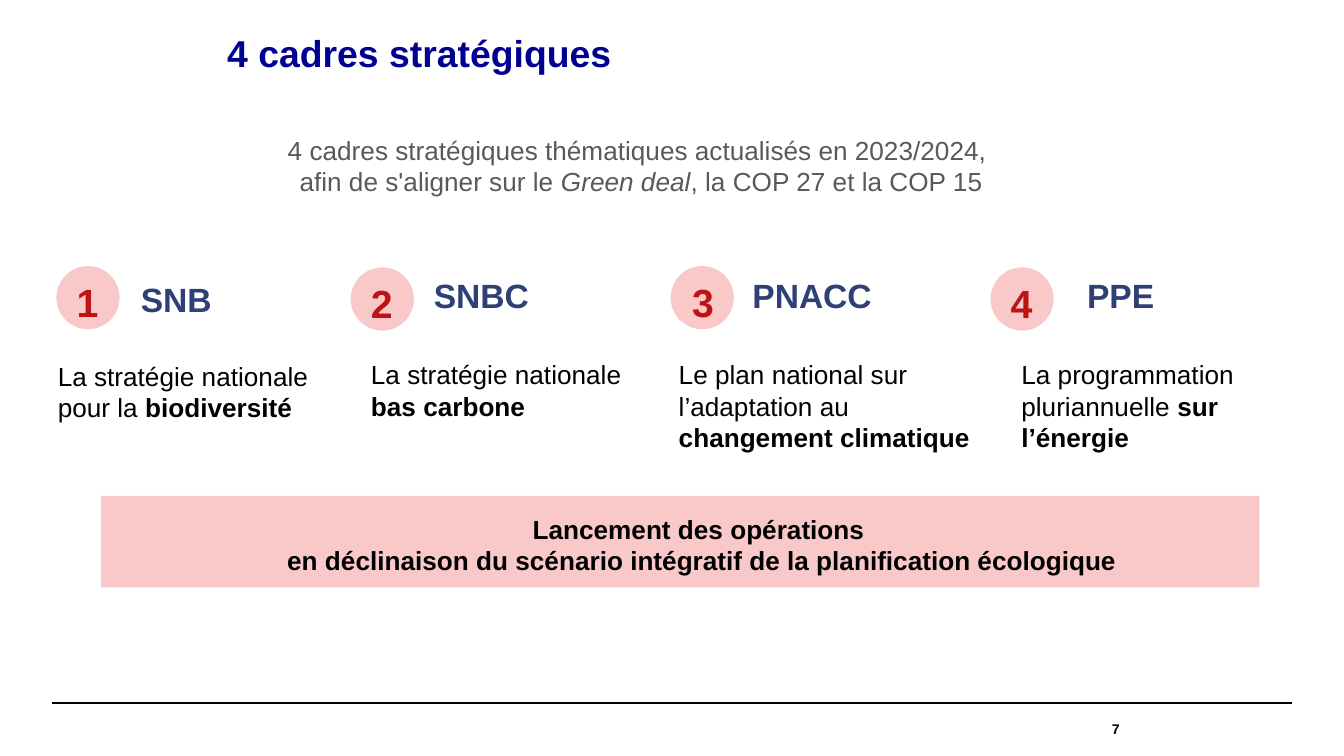
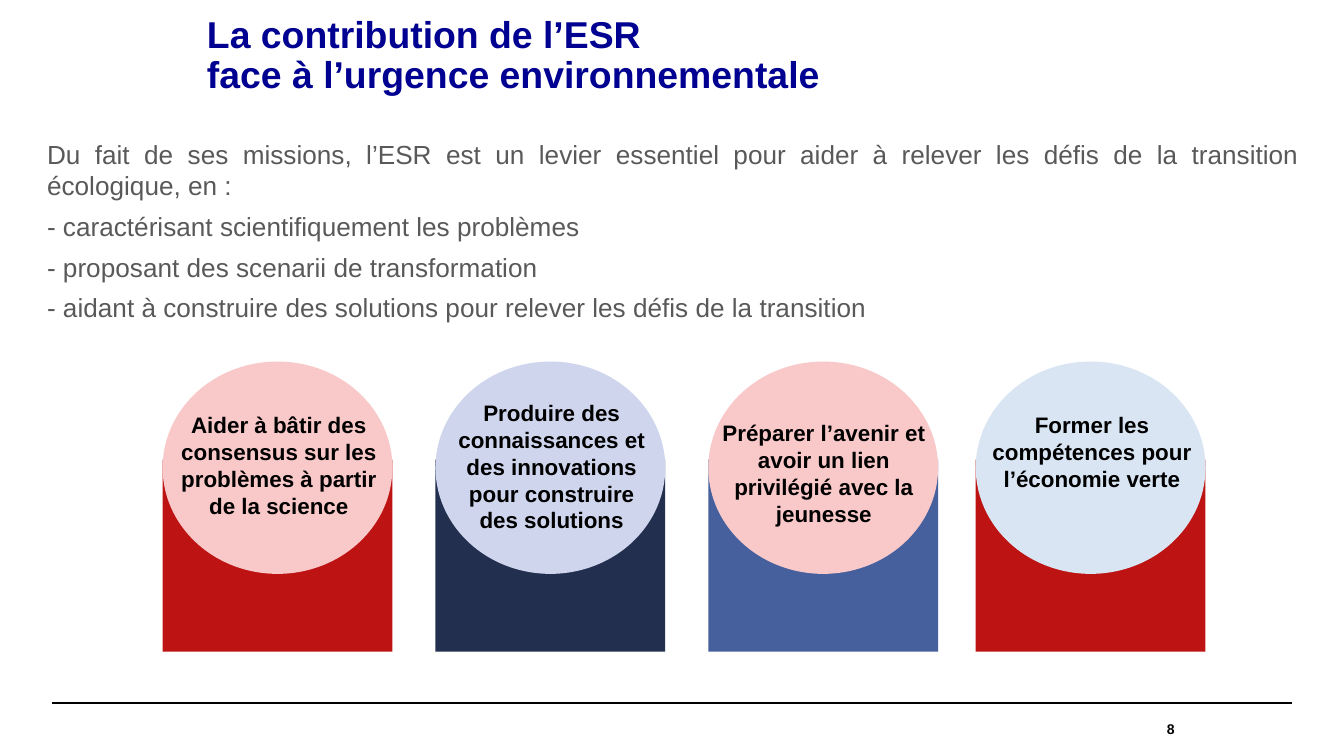
import pptx
import pptx.util
import pptx.dml.color
import pptx.enum.shapes
import pptx.enum.text
import pptx.oxml.ns
import lxml.etree

Inches = pptx.util.Inches
Pt = pptx.util.Pt
Shape = pptx.enum.shapes.MSO_SHAPE
Align = pptx.enum.text.PP_ALIGN
Anchor = pptx.enum.text.MSO_ANCHOR
qn = pptx.oxml.ns.qn

FONT = "Arial"
COLORS = {
    "title": "000091",
    "black": "000000",
    "grey": "595959",
    "name": "2F4077",
    "red": "BD1313",
    "pink": "F9C8C8",
    "navy": "232F4E",
    "blue": "465F9D",
    "lilac": "CED5EC",
    "sky": "D9E5F3",
}

FRAMES = [
    ((0.42, 1.98), "1", "SNB", (0.15, 0.53, 0.05), (0.01, 0.7, 2.01),
     [("La stratégie nationale pour la ", ""), ("biodiversité", "b")]),
    ((2.61, 1.99), "2", "SNBC", (0.15, 0.52, 0.01), (0.15, 0.68, 2.09),
     [("La stratégie nationale", ""), (" bas carbone", "b")]),
    ((4.99, 1.98), "3", "PNACC", (0.16, 0.51, 0.02), (0.06, 0.69, 2.19),
     [("Le plan national sur l’adaptation au ", ""), ("changement climatique", "b")]),
    ((7.37, 1.99), "4", "PPE", (0.15, 0.62, 0.01), (0.23, 0.68, 2.26),
     [("La programmation pluriannuelle ", ""), ("sur l’énergie", "b")]),
]

ROLES = [
    (1.21, "red", "pink", (-0.06, 0.32, 1.85, 0.91),
     "Aider à bâtir des consensus sur les problèmes à partir de la science"),
    (3.24, "navy", "lilac", (0.06, 0.23, 1.61, 1.11),
     "Produire des connaissances et des innovations pour construire des solutions"),
    (5.27, "blue", "pink", (0, 0.38, 1.72, 0.91),
     "Préparer l’avenir et avoir un lien privilégié avec la jeunesse"),
    (7.26, "red", "sky", (-0.06, 0.32, 1.85, 0.71),
     "Former les compétences pour l’économie verte"),
]

GOALS = [
    "Du fait de ses missions, l’ESR est un levier essentiel pour aider à relever les défis "
    "de la transition écologique, en :",
    "- caractérisant scientifiquement les problèmes",
    "- proposant des scenarii de transformation ",
    "- aidant à construire des solutions pour relever les défis de la transition",
]


def tint(key):
    return pptx.dml.color.RGBColor.from_string(COLORS[key])


def place(shape, box):
    shape.left, shape.top, shape.width, shape.height = map(Inches, box)


def style(font, size, color, bold=False, slant=False):
    font.name = FONT
    font.size = Pt(size)
    font.bold = bold
    font.italic = slant
    font.color.rgb = tint(color)


def clear(frame):
    frame.margin_left = frame.margin_top = 0
    frame.margin_right = frame.margin_bottom = 0


def write(frame, lines, size, color, bold=False, align=Align.LEFT,
          pitch=None, after=0, plain=False):
    frame.word_wrap = True
    for index, line in enumerate(lines):
        para = frame.paragraphs[0] if index == 0 else frame.add_paragraph()
        if plain:
            props = para._p.get_or_add_pPr()
            props.set("marL", "0")
            props.set("indent", "0")
            lxml.etree.SubElement(props, qn("a:buNone"))
        para.alignment = align
        para.space_before = Pt(0)
        para.space_after = Pt(after)
        if pitch:
            para.line_spacing = Pt(pitch)
        for text, mark in ([(line, "")] if isinstance(line, str) else line):
            run = para.add_run()
            run.text = text
            style(run.font, size, color, bold or mark == "b", mark == "i")


def add_text(slide, box, lines, size, color, tight=False, **looks):
    frame = slide.shapes.add_textbox(*map(Inches, box)).text_frame
    if tight:
        clear(frame)
    write(frame, lines, size, color, **looks)
    return frame


def add_fill(slide, kind, box, color):
    shape = slide.shapes.add_shape(kind, *map(Inches, box))
    shape.shadow.inherit = False
    shape.fill.solid()
    shape.fill.fore_color.rgb = tint(color)
    shape.line.fill.background()


def add_foot(slide, left, number):
    rule = slide.shapes.add_connector(
        pptx.enum.shapes.MSO_CONNECTOR.STRAIGHT,
        Inches(0.39), Inches(5.23), Inches(9.61), Inches(5.23))
    rule.line.color.rgb = tint("black")
    rule.line.width = Pt(0.8)
    lxml.etree.SubElement(rule._element.spPr, qn("a:effectLst"))
    frame = add_text(slide, (left, 5.23, 1.48, 0.39), [number], 7.5, "black",
                     tight=True, bold=True, align=Align.RIGHT)
    frame.vertical_anchor = Anchor.MIDDLE


def add_title(slide, box, lines):
    title = slide.shapes.title
    place(title, box)
    frame = title.text_frame
    clear(frame)
    frame.auto_size = pptx.enum.text.MSO_AUTO_SIZE.NONE
    frame.vertical_anchor = Anchor.TOP
    frame.word_wrap = True
    para = frame.paragraphs[0]
    para.alignment = Align.LEFT
    para.line_spacing = 0.9
    for index, line in enumerate(lines):
        if index:
            para.add_line_break()
        run = para.add_run()
        run.text = line
        style(run.font, 20, "title", True)


def add_frame(slide, spot, digit, name, shifts, span, words):
    left, top = spot
    inset, gap, drop = shifts
    shift, fall, width = span
    add_fill(slide, Shape.OVAL, (left, top, 0.47, 0.47), "pink")
    add_text(slide, (left + inset, top + 0.03, 0.22, 0.41), [digit], 21, "red",
             tight=True, bold=True, pitch=29.4)
    add_text(slide, (left + gap, top + drop, 1.47, 0.4), [name], 18, "name", bold=True)
    add_text(slide, (left + shift, top + fall, width, 0.72), [words], 14, "black",
             tight=True, pitch=16.8)


def add_launch(slide, box):
    left, top, width, height = box
    add_fill(slide, Shape.RECTANGLE, box, "pink")
    add_text(slide, (left + 1.07, top + 0.13, 6.81, 0.48),
             ["Lancement des opérations ",
              "en déclinaison du scénario intégratif de la planification écologique"],
             14, "black", tight=True, bold=True, align=Align.CENTER, pitch=16.8)


def add_role(slide, box, base, disc, inner, words):
    left, top, width, height = box
    add_fill(slide, Shape.RECTANGLE, (left, top + 0.73, width, height - 0.73), base)
    add_fill(slide, Shape.OVAL, (left, top, width, 1.58), disc)
    shift, drop, span, depth = inner
    add_text(slide, (left + shift, top + drop, span, depth), [words], 12, "black",
             bold=True, align=Align.CENTER)


def add_goals(slide, box):
    body = slide.placeholders[1]
    place(body, box)
    frame = body.text_frame
    clear(frame)
    frame.auto_size = pptx.enum.text.MSO_AUTO_SIZE.NONE
    write(frame, GOALS, 14, "grey", align=Align.JUSTIFY, after=5, plain=True)


def build_frames(deck):
    slide = deck.slides.add_slide(deck.slide_layouts[5])
    add_title(slide, (1.69, 0.26, 3.9, 0.36), ["4 cadres stratégiques"])
    add_text(slide, (0, 0.95, 9.54, 0.81),
             ["4 cadres stratégiques thématiques actualisés en 2023/2024, ",
              [("afin de s'aligner sur le ", ""), ("Green deal", "i"),
               (", la COP 27 et la COP 15", "")]],
             14, "grey", align=Align.CENTER)
    for item in FRAMES:
        add_frame(slide, *item)
    add_launch(slide, (0.75, 3.69, 8.62, 0.68))
    add_foot(slide, 6.85, "7")


def build_roles(deck):
    slide = deck.slides.add_slide(deck.slide_layouts[1])
    add_title(slide, (1.54, 0.12, 8.34, 0.72),
              ["La contribution de l’ESR ", "face à l’urgence environnementale"])
    add_goals(slide, (0.35, 1.03, 9.32, 1.44))
    for left, *looks in ROLES:
        add_role(slide, (left, 2.69, 1.71, 2.16), *looks)
    add_foot(slide, 7.26, "8")


def main():
    deck = pptx.Presentation()
    deck.slide_width = Inches(10)
    deck.slide_height = deck.slide_width * 9 // 16
    build_frames(deck)
    build_roles(deck)
    deck.save("out.pptx")


if __name__ == "__main__":
    main()
